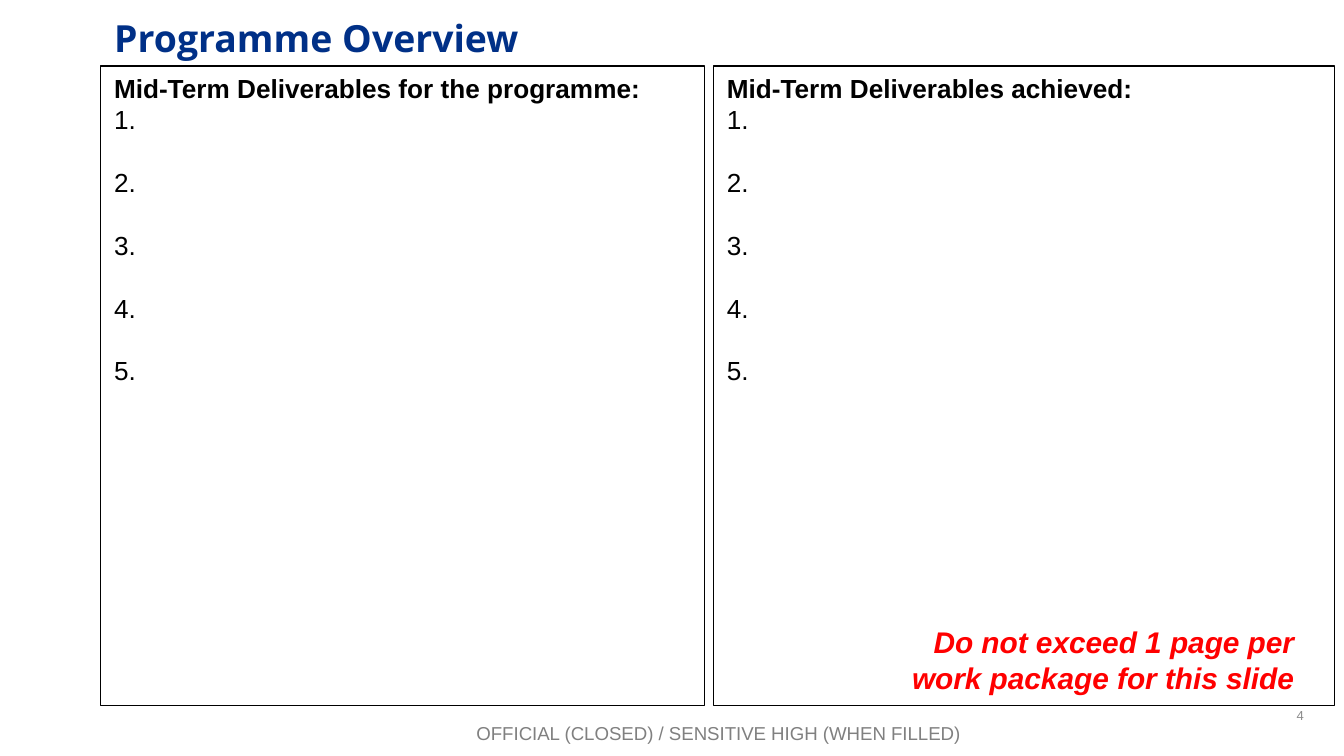
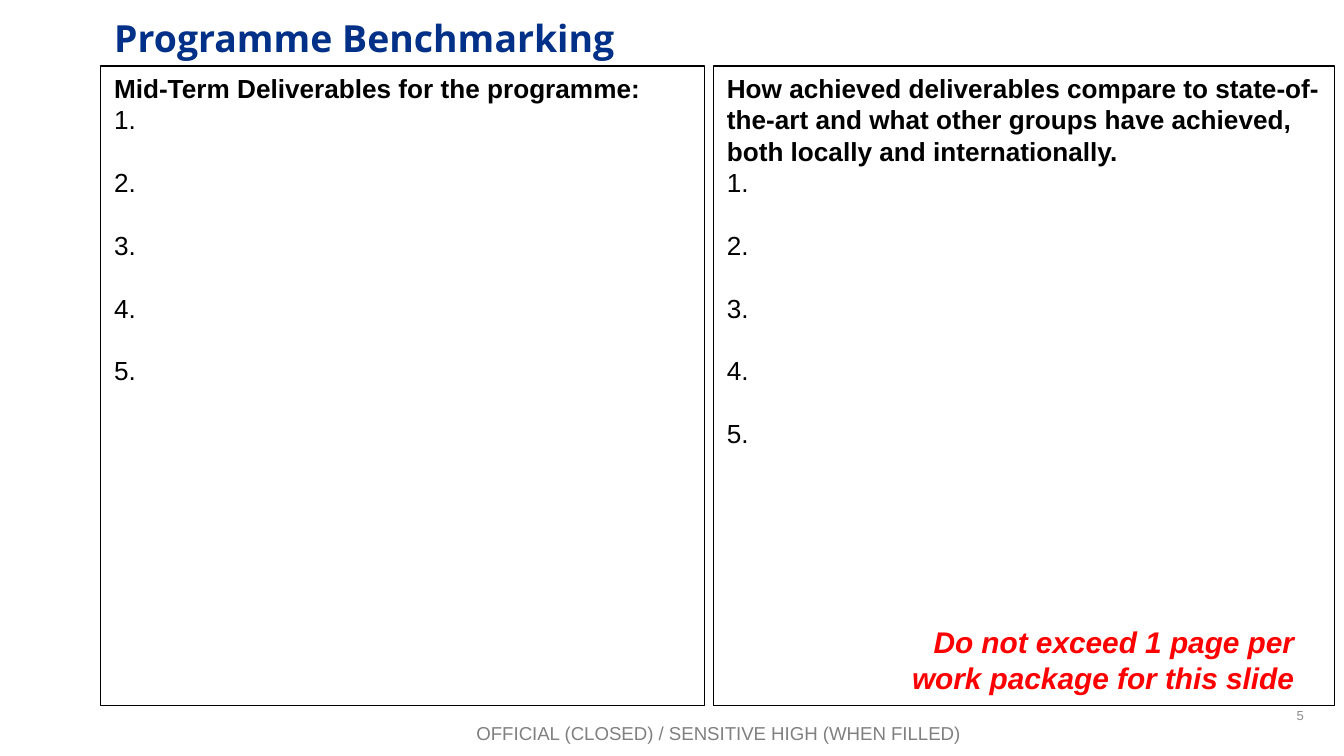
from dataclasses import dataclass

from pptx import Presentation
from pptx.dml.color import RGBColor
from pptx.enum.shapes import MSO_SHAPE
from pptx.enum.text import MSO_ANCHOR as Anchor, MSO_AUTO_SIZE as AutoSize, PP_ALIGN as Align
from pptx.util import Inches, Pt

COLOURS = {
    "title": "003087",
    "text": "000000",
    "warning": "FF0000",
    "footer": "808080",
    "number": "8C8C8C",
}
FORMATS = {
    "title": {"name": "Open Sans", "size": Pt(20), "bold": True, "italic": False},
    "heading": {"name": "Arial", "size": Pt(14), "bold": True},
    "item": {"name": "Arial", "size": Pt(14), "bold": False},
    "warning": {"name": "Arial", "size": Pt(16), "bold": True, "italic": True},
    "footer": {"name": "Arial", "size": Pt(10)},
    "number": {"name": "Arial", "size": Pt(7)},
}
SLIDE_WIDTH = Inches(10)
SLIDE_HEIGHT = SLIDE_WIDTH * 9 // 16
ITEM_COUNT = 5
ITEM_GAP = Pt(16.8)
HANGING = Inches(0.19)
FIRST_SLIDE_NUMBER = 4


@dataclass(frozen=True)
class Box:
    left: float
    top: float
    width: float
    height: float

    def lengths(self):
        return [Inches(v) for v in (self.left, self.top, self.width, self.height)]


@dataclass(frozen=True)
class Label:
    text: str
    box: Box
    style: str
    align: Align
    anchor: Anchor = Anchor.TOP
    grow: bool = True


@dataclass(frozen=True)
class Panel:
    heading: str
    box: Box
    hang_heading: bool = False
    hang_items: bool = False


@dataclass(frozen=True)
class DeliverablesSlide:
    title: str
    panels: tuple


TITLE_BOX = Box(0.75, 0.06, 8.66, 0.79)
LEFT_BOX = Box(0.75, 0.49, 4.49, 4.76)
RIGHT_BOX = Box(5.31, 0.49, 4.62, 4.76)
NUMBER_BOX = Box(7.47, 5.17, 2.33, 0.3)

FOOTER = Label("OFFICIAL (CLOSED) / SENSITIVE HIGH (WHEN FILLED)",
               Box(0.68, 5.32, 9.33, 0.27), "footer", Align.CENTER)
WARNING = Label("Do not exceed 1 page per work package for this slide",
                Box(6.33, 4.59, 3.4, 0.64), "warning", Align.RIGHT)
PLANNED = Panel("Mid-Term Deliverables for the programme:", LEFT_BOX)

SLIDES = (
    DeliverablesSlide("Programme Overview", (
        PLANNED,
        Panel("Mid-Term Deliverables achieved:", RIGHT_BOX, True, True),
    )),
    DeliverablesSlide("Programme Benchmarking", (
        PLANNED,
        Panel("How achieved deliverables compare to state-of-the-art and what other "
              "groups have achieved, both locally and internationally.",
              RIGHT_BOX, hang_items=True),
    )),
)


def write(paragraph, text: str, style: str, colour: str, align: Align = Align.LEFT) -> None:
    run = paragraph.add_run()
    run.text = text
    for name, value in FORMATS[style].items():
        setattr(run.font, name, value)
    run.font.color.rgb = RGBColor.from_string(COLOURS[colour])
    paragraph.alignment = align


def hang(paragraph) -> None:
    properties = paragraph._p.get_or_add_pPr()
    properties.set("marL", str(HANGING))
    properties.set("indent", str(-HANGING))


def set_title(slide, text: str) -> None:
    title = slide.shapes.title
    title.left, title.top, title.width, title.height = TITLE_BOX.lengths()
    frame = title.text_frame
    frame.word_wrap = True
    frame.auto_size = AutoSize.NONE
    frame.vertical_anchor = Anchor.TOP
    write(frame.paragraphs[0], text, "title", "title")


def add_label(slide, label: Label) -> None:
    frame = slide.shapes.add_textbox(*label.box.lengths()).text_frame
    frame.word_wrap = True
    frame.auto_size = AutoSize.SHAPE_TO_FIT_TEXT if label.grow else AutoSize.NONE
    frame.vertical_anchor = label.anchor
    write(frame.paragraphs[0], label.text, label.style, label.style, label.align)


def add_panel(slide, panel: Panel) -> None:
    """Draw an outlined box with a heading and an empty numbered list."""
    shape = slide.shapes.add_shape(MSO_SHAPE.RECTANGLE, *panel.box.lengths())
    shape.shadow.inherit = False
    shape.fill.background()
    shape.line.color.rgb = RGBColor.from_string(COLOURS["text"])
    shape.line.width = Pt(0.75)
    frame = shape.text_frame
    frame.word_wrap = True
    frame.vertical_anchor = Anchor.TOP

    heading = frame.paragraphs[0]
    write(heading, panel.heading, "heading", "text")
    if panel.hang_heading:
        hang(heading)
    for number in range(1, ITEM_COUNT + 1):
        item = frame.add_paragraph()
        write(item, f"{number}.", "item", "text")
        if number > 1:
            item.space_before = ITEM_GAP
        if panel.hang_items:
            hang(item)


def add_slide(presentation, content: DeliverablesSlide, number: int) -> None:
    slide = presentation.slides.add_slide(presentation.slide_layouts.get_by_name("Title Only"))
    add_label(slide, Label(str(number), NUMBER_BOX, "number", Align.RIGHT, Anchor.MIDDLE, False))
    add_label(slide, FOOTER)
    set_title(slide, content.title)
    for panel in content.panels:
        add_panel(slide, panel)
    add_label(slide, WARNING)


def main() -> None:
    presentation = Presentation()
    presentation.slide_width, presentation.slide_height = SLIDE_WIDTH, SLIDE_HEIGHT
    for number, content in enumerate(SLIDES, FIRST_SLIDE_NUMBER):
        add_slide(presentation, content, number)
    presentation.save("out.pptx")


if __name__ == "__main__":
    main()
